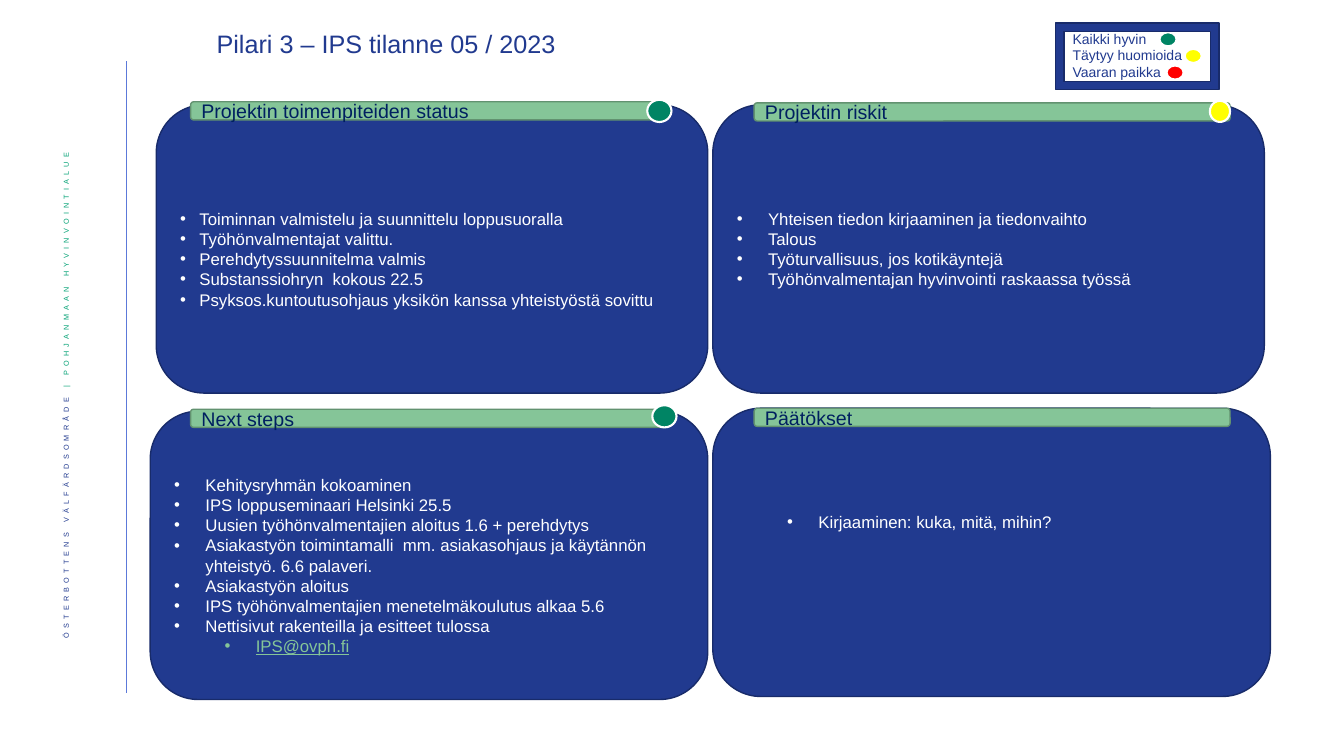
"""Build the pillar 3 status slide with four panels and a legend."""
from lxml import etree
from pptx import Presentation
from pptx.dml.color import RGBColor
from pptx.enum.shapes import MSO_CONNECTOR, MSO_SHAPE
from pptx.enum.text import MSO_ANCHOR, PP_ALIGN
from pptx.oxml.ns import qn
from pptx.util import Inches, Pt

ROUND, FRAME = MSO_SHAPE.ROUNDED_RECTANGLE, MSO_SHAPE.FRAME
DOT, LINE = MSO_SHAPE.FLOWCHART_CONNECTOR, MSO_CONNECTOR.STRAIGHT
TOP, MID = MSO_ANCHOR.TOP, MSO_ANCHOR.MIDDLE
LEFT, RIGHT = PP_ALIGN.LEFT, PP_ALIGN.RIGHT

HUES = {
    "navy": "213A8F", "edge": "182B6A", "mint": "85C598", "rim": "629270",
    "ink": "002060", "white": "FFFFFF", "rule": "5C79D9", "leaf": "00A174",
    "good": "008464", "warn": "FFFF00", "risk": "FF0000",
}
TITLE = "Pilari 3 – IPS tilanne 05 / 2023"
SIDE = [("ÖSTERBOTTENS VÄLFÄRDSOMRÅDE ", "navy"), ("| POHJANMAAN HYVINVOINTIALUE", "leaf")]
LEGEND = [
    ("Kaikki hyvin", "good", 11.5),
    ("Täytyy huomioida", "warn", 11.75),
    ("Vaaran paikka", "risk", 11.57),
]
PANELS = [
    {"head": "Projektin toimenpiteiden status", "box": (1.55, 1.04, 5.47, 2.86),
     "bar": (1.89, 1.01), "first": 2.07, "hang": 0.19,
     "dot": ("good", (6.42, 0.99, 0.24, 0.22)),
     "items": [
         ("Toiminnan valmistelu ja suunnittelu loppusuoralla", 0),
         ("Työhönvalmentajat valittu.", 0),
         ("Perehdytyssuunnitelma valmis", 0),
         ("Substanssiohryn  kokous 22.5", 0),
         ("Psyksos.kuntoutusohjaus yksikön kanssa yhteistyöstä sovittu", 0)]},
    {"head": "Projektin riskit", "box": (7.07, 1.04, 5.47, 2.86),
     "bar": (7.48, 1.02), "first": 2.07, "hang": 0.31,
     "dot": ("warn", (12, 1, 0.2, 0.21)),
     "items": [
         ("Yhteisen tiedon kirjaaminen ja tiedonvaihto", 0),
         ("Talous", 0),
         ("Työturvallisuus, jos kotikäyntejä", 0),
         ("Työhönvalmentajan hyvinvointi raskaassa työssä", 0)]},
    {"head": "Next steps", "box": (1.49, 4.08, 5.53, 2.86),
     "bar": (1.89, 4.06), "first": 4.71, "hang": 0.31,
     "dot": ("good", (6.47, 4.02, 0.24, 0.22)),
     "items": [
         ("Kehitysryhmän kokoaminen", 0),
         ("IPS loppuseminaari Helsinki 25.5", 0),
         ("Uusien työhönvalmentajien aloitus 1.6 + perehdytys", 0),
         ("Asiakastyön toimintamalli  mm. asiakasohjaus ja käytännön yhteistyö. 6.6 palaveri.", 0),
         ("Asiakastyön aloitus", 0),
         ("IPS työhönvalmentajien menetelmäkoulutus alkaa 5.6", 0),
         ("Nettisivut rakenteilla ja esitteet tulossa", 0),
         ("IPS@ovph.fi", 1)]},
    {"head": "Päätökset", "box": (7.07, 4.05, 5.53, 2.86),
     "bar": (7.48, 4.05), "first": 5.08, "hang": 0.31, "dot": None,
     "items": [("Kirjaaminen: kuka, mitä, mihin?", 1)]},
]
BAR = (4.72, 0.18)
CORNER = 0.14
STEP = 0.5
MAIL = "IPS@ovph.fi"


def tint(name):
    return RGBColor.from_string(HUES[name])


def apply(thing, **form):
    for key, value in form.items():
        setattr(thing, key, value)


def write(para, text, size, hue, **form):
    run = para.add_run()
    run.text = text
    apply(run.font, name="Arial", size=Pt(size), **form)
    run.font.color.rgb = tint(hue)
    return run


def draw(slide, kind, box, fill, edge, width=1):
    shape = slide.shapes.add_shape(kind, *map(Inches, box))
    shape.shadow.inherit = False
    shape.fill.solid()
    shape.fill.fore_color.rgb = tint(fill)
    shape.line.color.rgb = tint(edge)
    shape.line.width = Pt(width)
    return shape


def label(slide, box):
    frame = slide.shapes.add_textbox(*map(Inches, box)).text_frame
    frame.word_wrap = True
    return frame


def rows(frame, count):
    return [frame.paragraphs[0]] + [frame.add_paragraph() for _ in range(count - 1)]


def bullet(para, level, hang):
    props = para._p.get_or_add_pPr()
    props.set("marL", str(Inches(hang + level * STEP)))
    props.set("indent", str(-Inches(hang)))
    etree.SubElement(props, qn("a:buFont")).set("typeface", "Arial")
    etree.SubElement(props, qn("a:buChar")).set("char", "•")
    apply(para, level=level, alignment=LEFT)


def panel(slide, data):
    frame = draw(slide, ROUND, data["box"], "navy", "edge").text_frame
    inset = data["first"] - data["box"][1] - CORNER
    apply(frame, vertical_anchor=TOP, margin_top=Inches(inset), word_wrap=True)
    items = data["items"]
    for para, (text, level) in zip(rows(frame, len(items)), items):
        bullet(para, level, data["hang"])
        mail = text == MAIL
        write(para, text, 12, "mint" if mail else "white", underline=mail)
    head = draw(slide, ROUND, data["bar"] + BAR, "mint", "rim").text_frame
    apply(head, vertical_anchor=MID, word_wrap=True)
    head.paragraphs[0].alignment = LEFT
    write(head.paragraphs[0], data["head"], 14, "ink")
    if data["dot"]:
        hue, box = data["dot"]
        draw(slide, DOT, box, hue, "white", 1.5)


def margin(slide):
    rule = slide.shapes.add_connector(LINE, *map(Inches, (1.25, 0.61, 1.25, 6.88)))
    rule.line.color.rgb = tint("rule")
    rule.line.width = Pt(0.5)
    etree.SubElement(rule.element.spPr, qn("a:effectLst"))
    frame = label(slide, (0.42, 1.42, 0.52, 5.73))
    frame.vertical_anchor = MID
    frame._txBody.bodyPr.set("vert", "vert270")
    para = frame.paragraphs[0]
    apply(para, alignment=RIGHT, line_spacing=0.9)
    for text, hue in SIDE:
        props = write(para, text, 9, hue)._r.get_or_add_rPr()
        for key, value in {"baseline": "30000", "spc": "300"}.items():
            props.set(key, value)


def legend(slide):
    frame = label(slide, (10.54, 0.25, 1.92, 0.61))
    paras = rows(frame, len(LEGEND))
    for row, (para, (text, hue, left)) in enumerate(zip(paras, LEGEND)):
        write(para, text, 10, "navy")
        draw(slide, DOT, (left, 0.32 + row * 0.165, 0.17, 0.14), hue, "white", 1.5)
    draw(slide, FRAME, (10.47, 0.23, 1.62, 0.66), "navy", "edge")


def main():
    deck = Presentation()
    apply(deck, slide_width=Inches(13.33), slide_height=Inches(7.5))
    slide = deck.slides.add_slide(deck.slide_layouts[6])
    margin(slide)
    for data in PANELS:
        panel(slide, data)
    legend(slide)
    write(label(slide, (2.05, 0.23, 6.73, 0.4)).paragraphs[0], TITLE, 18, "navy")
    deck.save("out.pptx")


if __name__ == "__main__":
    main()
